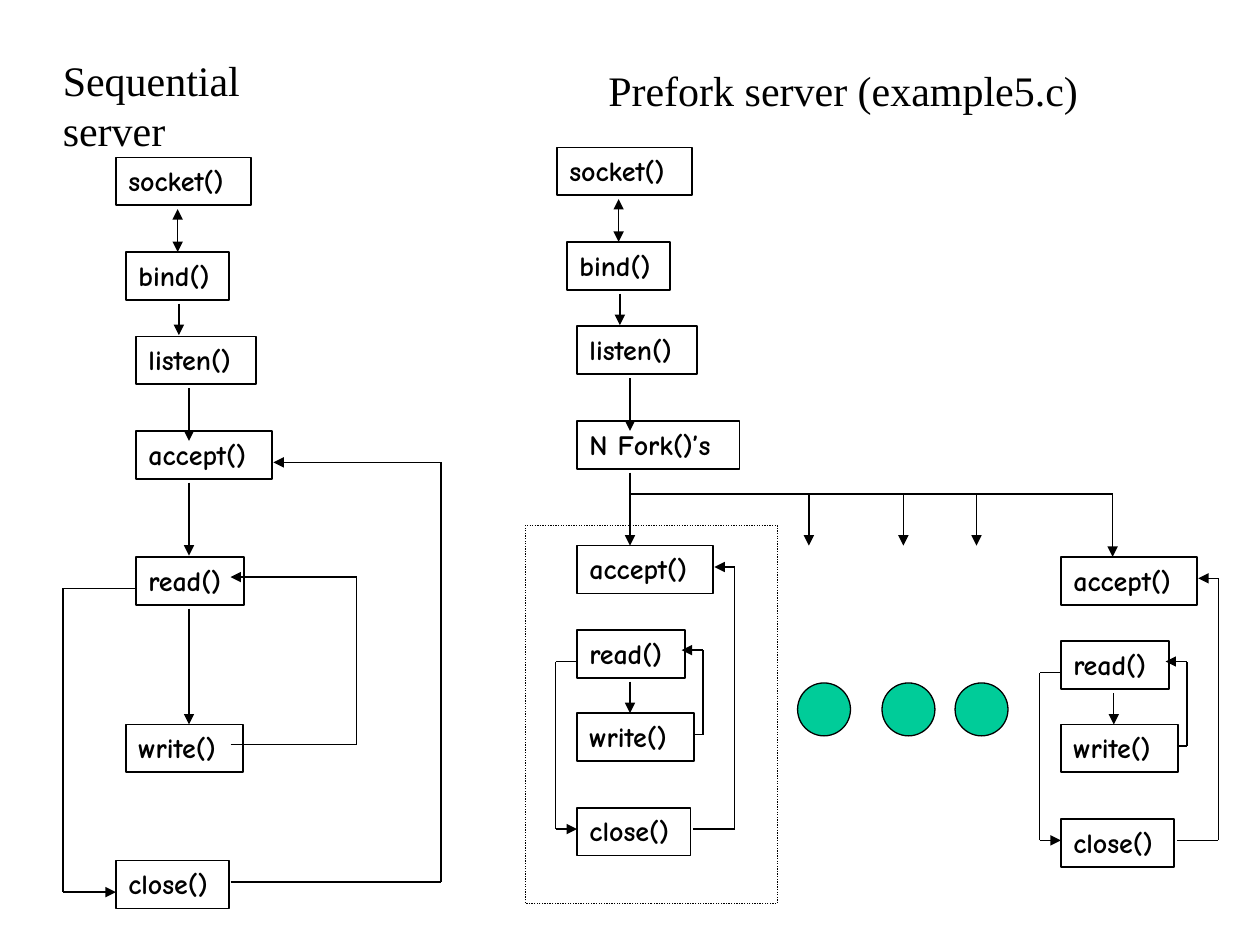
from itertools import pairwise

from lxml.etree import SubElement
from pptx import Presentation
from pptx.dml.color import RGBColor
from pptx.enum.dml import MSO_LINE
from pptx.enum.shapes import MSO_CONNECTOR, MSO_SHAPE
from pptx.enum.text import MSO_ANCHOR, MSO_AUTO_SIZE, PP_ALIGN
from pptx.oxml.ns import qn
from pptx.util import Inches, Pt

BLACK = "000000"
GREEN = "00CC99"
BOX_HEIGHT = 0.38
BOX_WIDTHS = {
    "socket()": 1.07, "bind()": 0.82, "listen()": 0.95, "accept()": 1.08,
    "read()": 0.86, "write()": 0.93, "close()": 0.9, "N Fork()’s": 1.29,
}


def color(hex_value):
    return RGBColor.from_string(hex_value)


def set_text(shape, text, font_name, size, bold=False):
    frame = shape.text_frame
    frame.text = text
    frame.word_wrap = False
    frame.auto_size = MSO_AUTO_SIZE.SHAPE_TO_FIT_TEXT
    frame.vertical_anchor = MSO_ANCHOR.TOP
    paragraph = frame.paragraphs[0]
    paragraph.alignment = PP_ALIGN.LEFT
    font = paragraph.font
    font.name, font.size, font.bold = font_name, Pt(size), bold
    font.color.rgb = color(BLACK)


def add_outline(slide, kind, left, top, width, height, line_width=0.75, fill=None):
    shape = slide.shapes.add_shape(
        kind, Inches(left), Inches(top), Inches(width), Inches(height))
    shape.shadow.inherit = False
    if fill:
        shape.fill.solid()
        shape.fill.fore_color.rgb = color(fill)
    else:
        shape.fill.background()
    shape.line.color.rgb = color(BLACK)
    shape.line.width = Pt(line_width)
    return shape


def add_call(slide, name, left, top):
    box = add_outline(slide, MSO_SHAPE.RECTANGLE, left, top,
                      BOX_WIDTHS[name], BOX_HEIGHT, line_width=1)
    set_text(box, name, "Comic Neue", 16, bold=True)
    return box


def add_title(slide, text, left, top, width):
    title = slide.shapes.add_textbox(
        Inches(left), Inches(top), Inches(width), Inches(0.5))
    set_text(title, text, "Times New Roman", 24)


def add_line(slide, start, end, head=False, tail=False):
    line = slide.shapes.add_connector(
        MSO_CONNECTOR.STRAIGHT, *(Inches(value) for value in (*start, *end)))
    line.line.color.rgb = color(BLACK)
    line.line.width = Pt(0.75)
    outline = line.line._get_or_add_ln()
    for tag, wanted in (("a:headEnd", head), ("a:tailEnd", tail)):
        if wanted:
            SubElement(outline, qn(tag), type="triangle")
    SubElement(line._element.spPr, qn("a:effectLst"))
    return line


def add_route(slide, left, top, points):
    """Bent line through points relative to (left, top), ending in an arrow."""
    corners = [(left + x, top + y) for x, y in points]
    for start, end in pairwise(corners):
        add_line(slide, start, end, tail=end == corners[-1])


def add_setup(slide, left, top, last_call):
    """Four calls that both kinds of server start with."""
    add_call(slide, "socket()", left, top)
    bind = add_call(slide, "bind()", left + 0.08, top + 0.75)
    add_call(slide, "listen()", left + 0.16, top + 1.42)
    add_call(slide, last_call, left + 0.16, top + 2.17)

    bind_middle = left + 0.08 + BOX_WIDTHS["bind()"] / 2
    socket_to_bind = add_line(slide, (bind_middle, top + 0.41),
                              (bind_middle, top + 0.75), head=True, tail=True)
    socket_to_bind.end_connect(bind, 0)
    for x, start, end in ((0.5, 1.16, 1.41), (0.58, 1.83, 2.25), (0.58, 2.58, 3.16)):
        add_route(slide, left, top, [(x, start), (x, end)])


def add_sequential_server(slide, left, top):
    add_title(slide, "Sequential server", left - 0.52, top - 0.87, 2.5)
    add_setup(slide, left, top, "accept()")
    add_call(slide, "read()", left + 0.16, top + 3.17)
    add_call(slide, "write()", left + 0.08, top + 4.5)
    add_call(slide, "close()", left, top + 5.58)

    routes = (
        [(0.58, 3.58), (0.58, 4.5)],                               # read to write
        [(0.91, 4.66), (1.91, 4.66), (1.91, 3.33), (0.91, 3.33)],  # write to read
        [(0.16, 3.42), (-0.42, 3.42), (-0.42, 5.83), (0, 5.83)],   # read to close
        [(0.91, 5.75), (2.58, 5.75), (2.58, 2.42), (1.25, 2.42)],  # close to accept
    )
    for route in routes:
        add_route(slide, left, top, route)


def add_worker(slide, left, top):
    """One forked process with its accept loop."""
    for name, offset in (("accept()", 0), ("read()", 0.67),
                         ("write()", 1.33), ("close()", 2.08)):
        add_call(slide, name, left, top + offset)

    routes = (
        [(0.42, 1.08), (0.42, 1.33)],                              # read to write
        [(0.92, 1.5), (1, 1.5), (1, 0.83), (0.83, 0.83)],          # write to read
        [(0, 0.92), (-0.17, 0.92), (-0.17, 2.25), (0, 2.25)],      # read to close
        [(0.92, 2.25), (1.25, 2.25), (1.25, 0.17), (1.09, 0.17)],  # close to accept
    )
    for route in routes:
        add_route(slide, left, top, route)


def add_prefork_server(slide, left, top):
    add_title(slide, "Prefork server (example5.c)", left + 0.31, top - 0.71, 3.93)
    add_setup(slide, left, top, "N Fork()’s")
    add_worker(slide, left + 0.16, top + 3.16)
    add_worker(slide, left + 4, top + 3.25)

    # Fan-out from the fork to the workers
    add_route(slide, left, top, [(0.58, 2.75), (4.41, 2.75), (4.41, 3.25)])
    for x in (2, 2.75, 3.33):
        add_route(slide, left, top, [(x, 2.75), (x, 3.16)])

    # Circles for the workers in between
    for x in (1.91, 2.58, 3.16):
        add_outline(slide, MSO_SHAPE.OVAL, left + x, top + 4.25, 0.42, 0.42, fill=GREEN)

    # Dotted frame around the first worker
    frame = add_outline(slide, MSO_SHAPE.RECTANGLE, left - 0.25, top + 3, 2, 3)
    frame.line.dash_style = MSO_LINE.ROUND_DOT


def main():
    presentation = Presentation()
    presentation.slide_width = Inches(10)
    presentation.slide_height = Inches(7.5)
    slide = presentation.slides.add_slide(presentation.slide_layouts[6])
    add_sequential_server(slide, 0.92, 1.25)
    add_prefork_server(slide, 4.42, 1.17)
    presentation.save("out.pptx")


if __name__ == "__main__":
    main()
